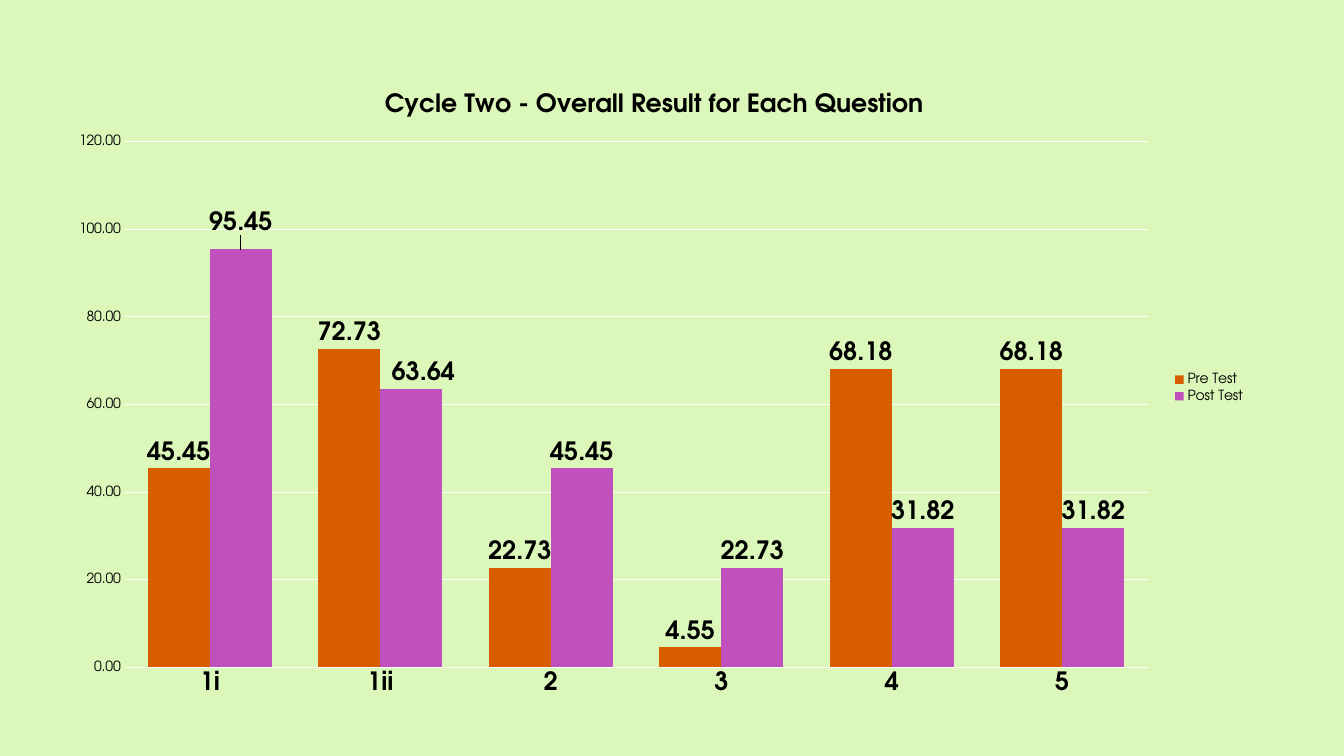
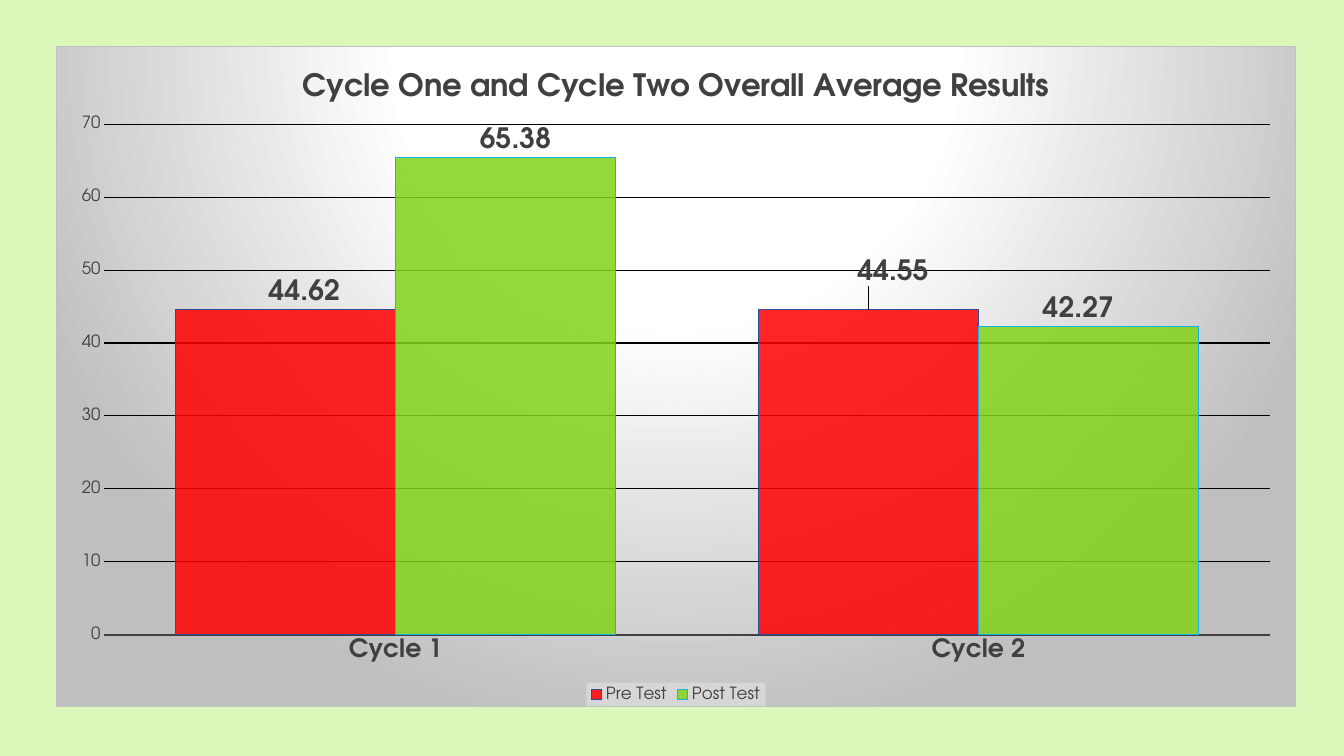
"""Build two slides comparing pre-test and post-test results in column charts."""
from pptx import Presentation
from pptx.chart.data import CategoryChartData
from pptx.dml.color import RGBColor
from pptx.enum.chart import XL_CHART_TYPE, XL_LABEL_POSITION, XL_LEGEND_POSITION, XL_TICK_MARK
from pptx.oxml import parse_xml
from pptx.oxml.ns import nsdecls, qn
from pptx.util import Cm, Pt

CLUSTERED = XL_CHART_TYPE.COLUMN_CLUSTERED
OUTSIDE_END = XL_LABEL_POSITION.OUTSIDE_END
LEGEND_RIGHT = XL_LEGEND_POSITION.RIGHT
LEGEND_BOTTOM = XL_LEGEND_POSITION.BOTTOM
NO_TICK = XL_TICK_MARK.NONE
FONT = "TeX Gyre Adventor"
COLORS = {
    "page": "DCF7BA", "black": "000000", "white": "FFFFFF", "dark": "404040",
    "silver": "BFBFBF", "mist": "F2F2F2", "orange": "D85C00", "purple": "C050BB",
    "red": "FF0000", "green": "81D31A", "blue": "31489F", "cyan": "12B2EB",
}
NAMESPACES = nsdecls("c", "a")

CHARTS = [
    {
        "title": "Cycle Two - Overall Result for Each Question",
        "place": (1.32, 1.7, 30.33, 16.15),
        "plot": (6, 11.6, 85, 82),
        "categories": ["1i", "1ii", "2", "3", "4", "5"],
        "series": [
            ("Pre Test", [45.45, 72.73, 22.73, 4.55, 68.18, 68.18], "orange", None),
            ("Post Test", [95.45, 63.64, 45.45, 22.73, 31.82, 31.82], "purple", None),
        ],
        "label_shifts": [(1, 0, 0, -1.6), (1, 1, 1, 0)],
        "text": "black", "grid": "white", "axis_line": ("white", 0.75),
        "title_size": 18, "label_size": 18, "small_size": 10,
        "gap": 75, "scale": (120, 20), "format": "0.00",
        "legend": LEGEND_RIGHT, "panel": False,
    },
    {
        "title": "Cycle One and Cycle Two Overall Average Results",
        "place": (1.4, 1.17, 31.27, 16.64),
        "plot": (3.9, 11.7, 94, 77.5),
        "categories": ["Cycle 1", "Cycle 2"],
        "series": [
            ("Pre Test", [44.62, 44.55], "red", "blue"),
            ("Post Test", [65.38, 42.27], "green", "cyan"),
        ],
        "label_shifts": [(0, 0, 1.5, 0), (0, 1, 2, -3), (1, 0, 0.8, 0), (1, 1, -0.8, 0)],
        "text": "dark", "grid": "black", "axis_line": ("dark", 1.5),
        "title_size": 22, "label_size": 20, "small_size": 12,
        "gap": 65, "scale": (70, 10), "format": "0",
        "legend": LEGEND_BOTTOM, "panel": True,
    },
]


def style_font(font, size, color, bold=False):
    font.name = FONT
    font.size = Pt(size)
    font.bold = bold
    font.color.rgb = RGBColor.from_string(COLORS[color])


def manual_layout(fields):
    tags = "".join(f'<c:{tag} val="{value}"/>' for tag, value in fields)
    return parse_xml(f"<c:layout {NAMESPACES}><c:manualLayout>{tags}</c:manualLayout></c:layout>")


deck = Presentation()
deck.slide_width, deck.slide_height = Cm(33.87), Cm(19.05)
page_fill = deck.slide_master.background.fill
page_fill.solid()
page_fill.fore_color.rgb = RGBColor.from_string(COLORS["page"])

for look in CHARTS:
    page = deck.slides.add_slide(deck.slide_layouts[6])
    data = CategoryChartData(number_format="0.00")
    data.categories = look["categories"]
    for name, values, color, outline in look["series"]:
        data.add_series(name, values)
    place = [Cm(length) for length in look["place"]]
    chart = page.shapes.add_chart(CLUSTERED, *place, data).chart
    style_font(chart.font, look["small_size"], look["text"])

    chart.has_title = True
    chart.chart_title.include_in_layout = False
    span = chart.chart_title.text_frame.paragraphs[0].add_run()
    span.text = look["title"]
    style_font(span.font, look["title_size"], look["text"], True)

    chart.has_legend = True
    chart.legend.position = look["legend"]
    chart.legend.include_in_layout = False
    style_font(chart.legend.font, look["small_size"], look["text"])

    category_axis, value_axis = chart.category_axis, chart.value_axis
    for axis in (category_axis, value_axis):
        axis.major_tick_mark = axis.minor_tick_mark = NO_TICK
    style_font(category_axis.tick_labels.font, 18, look["text"], True)
    line_color, line_width = look["axis_line"]
    category_axis.format.line.color.rgb = RGBColor.from_string(COLORS[line_color])
    category_axis.format.line.width = Pt(line_width)

    style_font(value_axis.tick_labels.font, look["small_size"], look["text"])
    value_axis.tick_labels.number_format = look["format"]
    value_axis.tick_labels.number_format_is_linked = False
    value_axis.minimum_scale = 0
    value_axis.maximum_scale, value_axis.major_unit = look["scale"]
    value_axis.format.line.fill.background()
    value_axis.has_major_gridlines = True
    grid_line = value_axis.major_gridlines.format.line
    grid_line.color.rgb = RGBColor.from_string(COLORS[look["grid"]])
    grid_line.width = Pt(0.75)

    plot = chart.plots[0]
    plot.gap_width, plot.overlap = look["gap"], 0
    plot.vary_by_categories = False
    for series, (name, values, color, outline) in zip(plot.series, look["series"]):
        series.invert_if_negative = False
        series.format.fill.solid()
        series.format.fill.fore_color.rgb = RGBColor.from_string(COLORS[color])
        if outline:
            series.format.line.color.rgb = RGBColor.from_string(COLORS[outline])
            series.format.line.width = Pt(0.75)
            solid = series.format.fill.fore_color
            tint = series.format.fill._xPr.find(qn("a:solidFill")).find(qn("a:srgbClr"))
            tint.append(parse_xml(f'<a:alpha {NAMESPACES} val="85000"/>'))
        labels = series.data_labels
        labels.show_value = True
        labels.position = OUTSIDE_END
        labels.number_format = "0.00"
        labels.number_format_is_linked = False
        style_font(labels.font, look["label_size"], look["text"], True)

    for series_index, point_index, right, down in look["label_shifts"]:
        series = plot.series[series_index]
        label = series.points[point_index].data_label
        style_font(label.font, look["label_size"], look["text"], True)
        label.position = OUTSIDE_END
        for index in series.data_labels._element.iter(qn("c:idx")):
            if index.get("val") == str(point_index):
                index.addnext(manual_layout([("x", right / 100), ("y", down / 100)]))

    chart_part = chart.element.find(qn("c:chart"))
    plot_area = chart_part.find(qn("c:plotArea"))
    for layout in plot_area.findall(qn("c:layout")):
        plot_area.remove(layout)
    left, top, width, height = [percent / 100 for percent in look["plot"]]
    plot_area.insert(0, manual_layout([
        ("layoutTarget", "inner"), ("xMode", "edge"), ("yMode", "edge"),
        ("x", left), ("y", top), ("w", width), ("h", height),
    ]))

    if look["panel"]:
        stops = "".join(
            f'<a:gs pos="{stop * 1000}"><a:srgbClr val="{COLORS[color]}"/></a:gs>'
            for stop, color in [(0, "white"), (39, "white"), (100, "silver")]
        )
        chart_part.addnext(parse_xml(
            f'<c:spPr {NAMESPACES}><a:gradFill><a:gsLst>{stops}</a:gsLst>'
            '<a:path path="circle"><a:fillToRect l="50000" t="-80000" r="50000" b="180000"/></a:path>'
            f'</a:gradFill><a:ln w="{Pt(0.75)}"><a:solidFill><a:srgbClr val="{COLORS["silver"]}"/>'
            '</a:solidFill></a:ln></c:spPr>'
        ))
        legend_text = chart_part.find(qn("c:legend")).find(qn("c:txPr"))
        legend_text.addprevious(parse_xml(
            f'<c:spPr {NAMESPACES}><a:solidFill><a:srgbClr val="{COLORS["mist"]}">'
            '<a:alpha val="39000"/></a:srgbClr></a:solidFill></c:spPr>'
        ))

deck.save("out.pptx")
